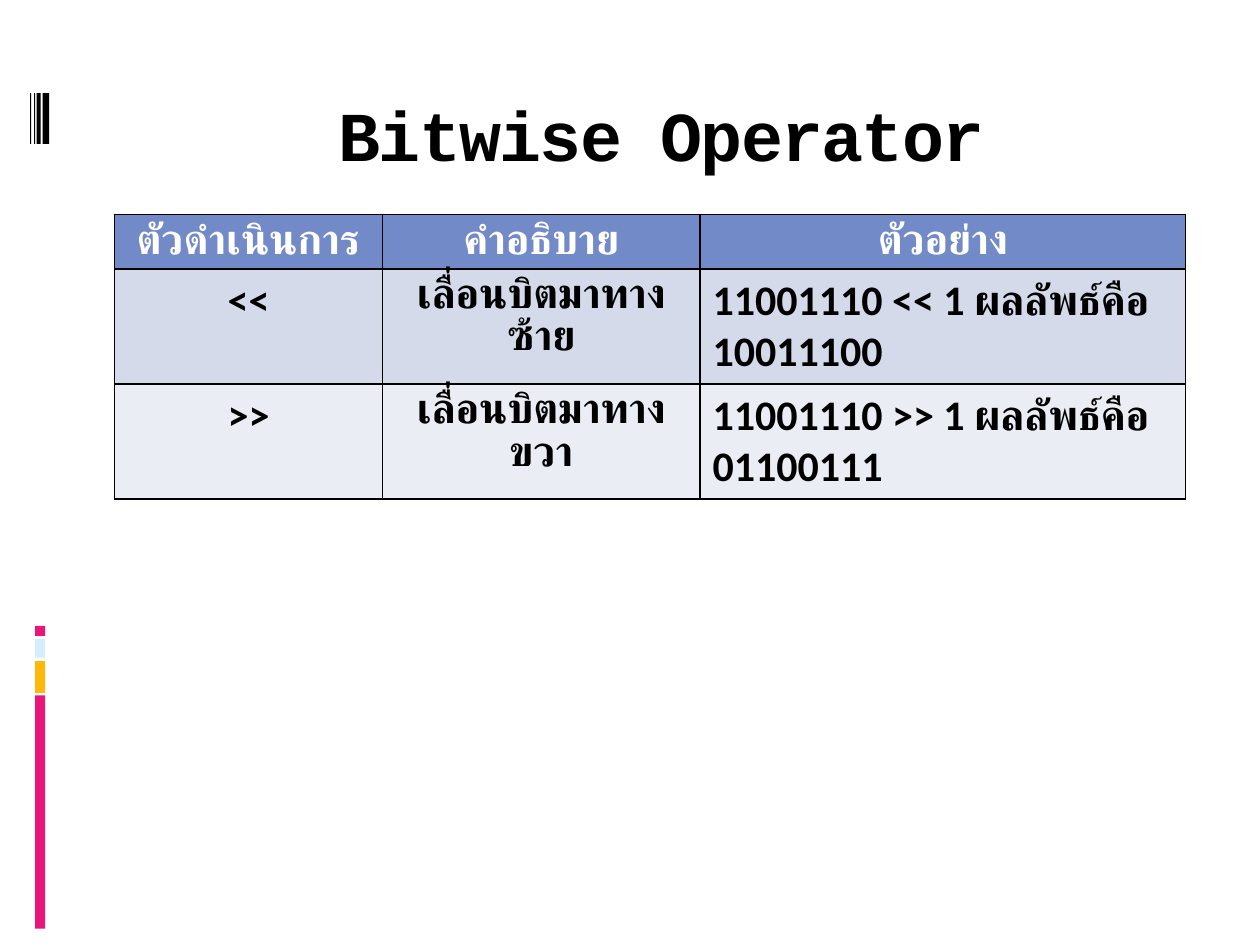
"""Build a slide with a table of the bitwise shift operators."""
from dataclasses import dataclass
from typing import Any

import lxml.etree
import pptx
import pptx.dml.color
import pptx.enum.shapes
import pptx.enum.text
import pptx.oxml.ns
import pptx.util

Cm = pptx.util.Cm
Pt = pptx.util.Pt
ALIGN = pptx.enum.text.PP_ALIGN

COLORS = {
    "black": "000000", "white": "FFFFFF", "pink": "EA157A", "amber": "FEB80A",
    "sky": "D6ECFF", "header": "738AC8", "odd": "D5DAEB", "even": "EBEDF5",
}
TITLE_FONT = {"name": "Courier New", "size": Pt(40), "bold": True}
CELL_FONT = {"name": "Calibri", "size": Pt(24), "bold": True}


@dataclass
class Bar:
    left: float
    top: float
    width: float
    height: float
    color: str


@dataclass
class Row:
    height: float
    fill: str
    color: str
    texts: tuple[str, str, str]


BARS = [
    Bar(0.71, top, 0.2, height, color)
    for top, height, color in [
        (14.02, 4.7, "pink"), (13.33, 0.64, "amber"),
        (12.88, 0.38, "sky"), (12.62, 0.2, "pink"),
    ]
] + [
    Bar(left, 1.88, width, 1.02, "black")
    for left, width in [(0.86, 0.13), (0.74, 0.08), (0.69, 0.02), (0.61, 0.02)]
]
COLUMN_WIDTHS = (5.4, 6.4, 9.79)
ROWS = [
    Row(1.09, "header", "white", ("ตัวดำเนินการ", "คำอธิบาย", "ตัวอย่าง")),
    Row(2.32, "odd", "black",
        ("<<", "เลื่อนบิตมาทางซ้าย", "11001110 << 1 ผลลัพธ์คือ 10011100")),
    Row(2.32, "even", "black",
        (">>", "เลื่อนบิตมาทางขวา", "11001110 >> 1 ผลลัพธ์คือ 01100111")),
]


def rgb(color: str) -> pptx.dml.color.RGBColor:
    """Return the named colour."""
    return pptx.dml.color.RGBColor.from_string(COLORS[color])


def write(tf: Any, text: str, font: dict[str, Any], color: str, align: Any) -> Any:
    """Write one formatted run and return it."""
    p = tf.paragraphs[0]
    p.alignment = align
    r = p.add_run()
    r.text = text
    for key, value in font.items():
        setattr(r.font, key, value)
    r.font.color.rgb = rgb(color)
    return r


def draw_bar(s: Any, bar: Bar) -> None:
    """Draw one plain decorative bar."""
    sp = s.shapes.add_shape(
        pptx.enum.shapes.MSO_SHAPE.RECTANGLE,
        Cm(bar.left), Cm(bar.top), Cm(bar.width), Cm(bar.height))
    sp.shadow.inherit = False
    sp.fill.solid()
    sp.fill.fore_color.rgb = rgb(bar.color)
    sp.line.fill.background()


def draw_title(s: Any, text: str) -> None:
    """Place and format the title placeholder."""
    sp = s.shapes.title
    box = {"left": Cm(2.54), "top": Cm(1.42), "width": Cm(21.59), "height": Cm(2.54)}
    for key, value in box.items():
        setattr(sp, key, value)
    sp.text_frame.vertical_anchor = pptx.enum.text.MSO_ANCHOR.MIDDLE
    r = write(sp.text_frame, text, TITLE_FONT, "black", ALIGN.CENTER)
    r.font._element.set("spc", "-100")


def add_borders(cell: Any, color: str) -> None:
    """Draw a one-point line on each side of a cell."""
    qn = pptx.oxml.ns.qn
    tc_pr = cell._tc.get_or_add_tcPr()
    for i, side in enumerate(("a:lnL", "a:lnR", "a:lnT", "a:lnB")):
        ln = lxml.etree.Element(qn(side), w=str(Pt(1)))
        fill = lxml.etree.SubElement(ln, qn("a:solidFill"))
        lxml.etree.SubElement(fill, qn("a:srgbClr"), val=COLORS[color])
        tc_pr.insert(i, ln)


def draw_table(s: Any, rows: list[Row], widths: tuple[float, ...]) -> None:
    """Draw the operator table."""
    table = s.shapes.add_table(
        len(rows), len(widths), Cm(2.31), Cm(4.32),
        Cm(sum(widths)), Cm(sum(row.height for row in rows))).table
    for column, width in zip(table.columns, widths):
        column.width = Cm(width)
    for i, row in enumerate(rows):
        table.rows[i].height = Cm(row.height)
        for j, text in enumerate(row.texts):
            cell = table.cell(i, j)
            cell.fill.solid()
            cell.fill.fore_color.rgb = rgb(row.fill)
            is_example = i > 0 and j == len(widths) - 1
            align = ALIGN.LEFT if is_example else ALIGN.CENTER
            write(cell.text_frame, text, CELL_FONT, row.color, align)
            add_borders(cell, "black")


def main() -> None:
    """Build and save the slide."""
    prs = pptx.Presentation()
    prs.slide_width, prs.slide_height = Cm(25.4), Cm(19.05)
    s = prs.slides.add_slide(prs.slide_layouts.get_by_name("Title Only"))
    for bar in BARS:
        draw_bar(s, bar)
    draw_title(s, "Bitwise Operator")
    draw_table(s, ROWS, COLUMN_WIDTHS)
    prs.save("out.pptx")


if __name__ == "__main__":
    main()
